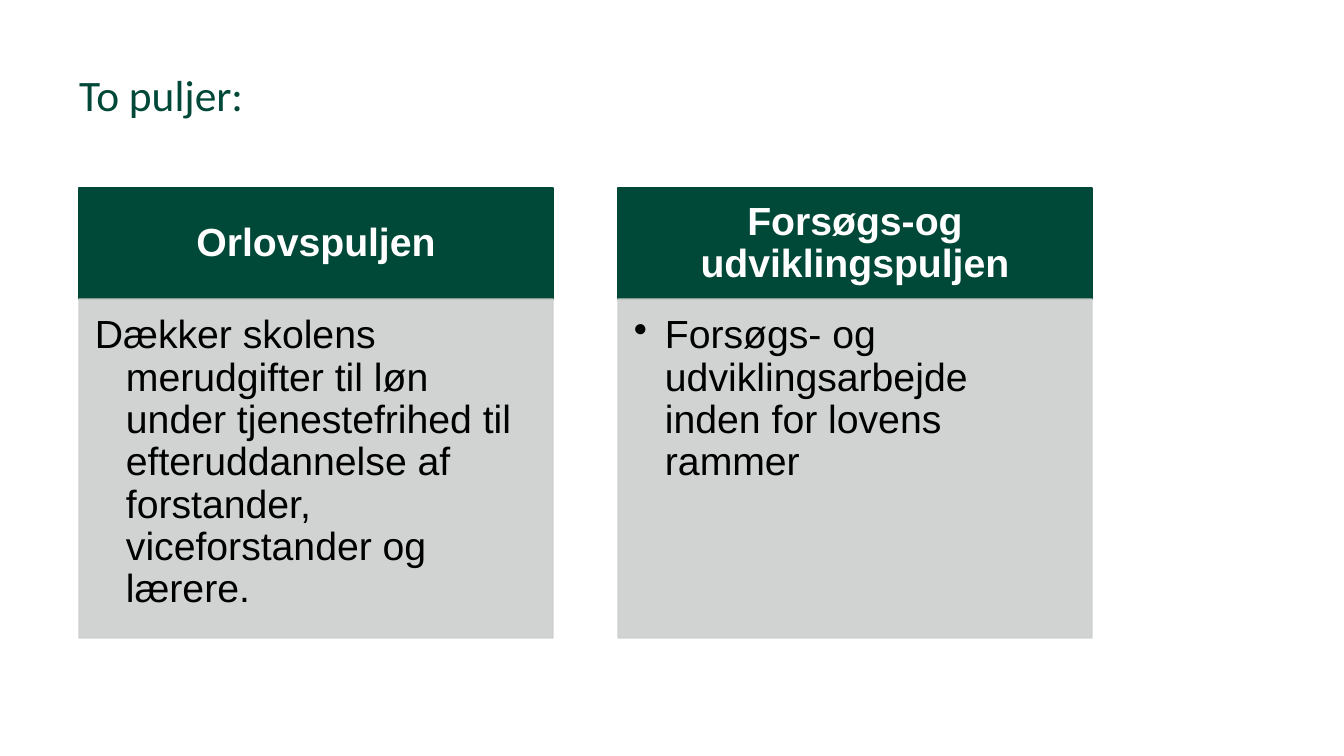
import pptx
import pptx.dml.color
import pptx.enum.shapes
import pptx.enum.text
import pptx.oxml
import pptx.oxml.ns
import pptx.util
from dataclasses import dataclass

TITLE = "To puljer:"
POOLS = [
    {"head": "Orlovspuljen",
     "body": "Dækker skolens merudgifter til løn under tjenestefrihed til "
             "efteruddannelse af forstander, viceforstander og lærere.",
     "bullet": None},
    {"head": "Forsøgs-og udviklingspuljen",
     "body": "Forsøgs- og udviklingsarbejde inden for lovens rammer",
     "bullet": "•"},
]


@dataclass(frozen=True)
class Theme:
    green: str = "004837"
    grey: str = "CCCFCE"
    white: str = "FFFFFF"
    black: str = "000000"
    title_font: str = "Calibri"
    text_font: str = "Arial"
    title_size: int = 31
    text_size: int = 28
    grey_opacity: int = 90


THEME = Theme()
ALIGN = pptx.enum.text.PP_ALIGN
ANCHOR = pptx.enum.text.MSO_ANCHOR

SLIDE_W, SLIDE_H = 1344, 756
LEFT, TOP = 79, 188
COL_W, GAP = 474, 65
HEAD_H, BODY_H = 111, 339
INDENT = 31


def px(n):
    return pptx.util.Emu(round(n * 914400 / 100.8))


def rgb(color):
    return pptx.dml.color.RGBColor.from_string(color)


def element(tag, **attrs):
    e = pptx.oxml.parse_xml(f"<a:{tag} {pptx.oxml.ns.nsdecls('a')}/>")
    for key, value in attrs.items():
        e.set(key, str(value))
    return e


def write(sp, text, *, size, color, font=THEME.text_font, bold=False, align=ALIGN.LEFT,
          anchor=ANCHOR.TOP, insets=(0, 0, 0, 0), spacing=0.9, hanging=0, bullet=None):
    tf = sp.text_frame
    tf.word_wrap = True
    tf.vertical_anchor = anchor
    tf.margin_left, tf.margin_top, tf.margin_right, tf.margin_bottom = map(px, insets)
    p = tf.paragraphs[0]
    p.alignment = align
    p.line_spacing = spacing
    if hanging:
        pPr = p._p.get_or_add_pPr()
        pPr.set("marL", str(px(hanging)))
        pPr.set("indent", str(-px(hanging)))
        pPr.append(element("buChar", char=bullet) if bullet else element("buNone"))
    r = p.add_run()
    r.text = text
    r.font.name, r.font.size, r.font.bold = font, pptx.util.Pt(size), bold
    r.font.color.rgb = rgb(color)


def add_block(slide, x, y, w, h, color, opacity=100):
    sp = slide.shapes.add_shape(pptx.enum.shapes.MSO_SHAPE.RECTANGLE, *map(px, (x, y, w, h)))
    sp.shadow.inherit = False
    sp.fill.solid()
    sp.line.fill.solid()
    sp.line.width = pptx.util.Pt(1)
    for fill in (sp.fill, sp.line.fill):
        fill.fore_color.rgb = rgb(color)
    if opacity < 100:
        for clr in sp._element.spPr.iter(pptx.oxml.ns.qn("a:srgbClr")):
            clr.append(element("alpha", val=opacity * 1000))
    return sp


def add_pool(slide, x, pool):
    head = add_block(slide, x, TOP, COL_W, HEAD_H, THEME.green)
    write(head, pool["head"], size=THEME.text_size, color=THEME.white, bold=True,
          align=ALIGN.CENTER, anchor=ANCHOR.MIDDLE, insets=(22, 12, 22, 12))
    body = add_block(slide, x, TOP + HEAD_H, COL_W, BODY_H, THEME.grey, THEME.grey_opacity)
    write(body, pool["body"], size=THEME.text_size, color=THEME.black,
          insets=(16, 16, 22, 24), hanging=INDENT, bullet=pool["bullet"])


def main():
    prs = pptx.Presentation()
    prs.slide_width, prs.slide_height = px(SLIDE_W), px(SLIDE_H)
    slide = prs.slides.add_slide(prs.slide_layouts[6])
    title = slide.shapes.add_textbox(*map(px, (LEFT, 77, 707, 143)))
    write(title, TITLE, size=THEME.title_size, color=THEME.green,
          font=THEME.title_font, spacing=0.83)
    for i, pool in enumerate(POOLS):
        add_pool(slide, LEFT + i * (COL_W + GAP), pool)
    prs.save("out.pptx")


if __name__ == "__main__":
    main()
